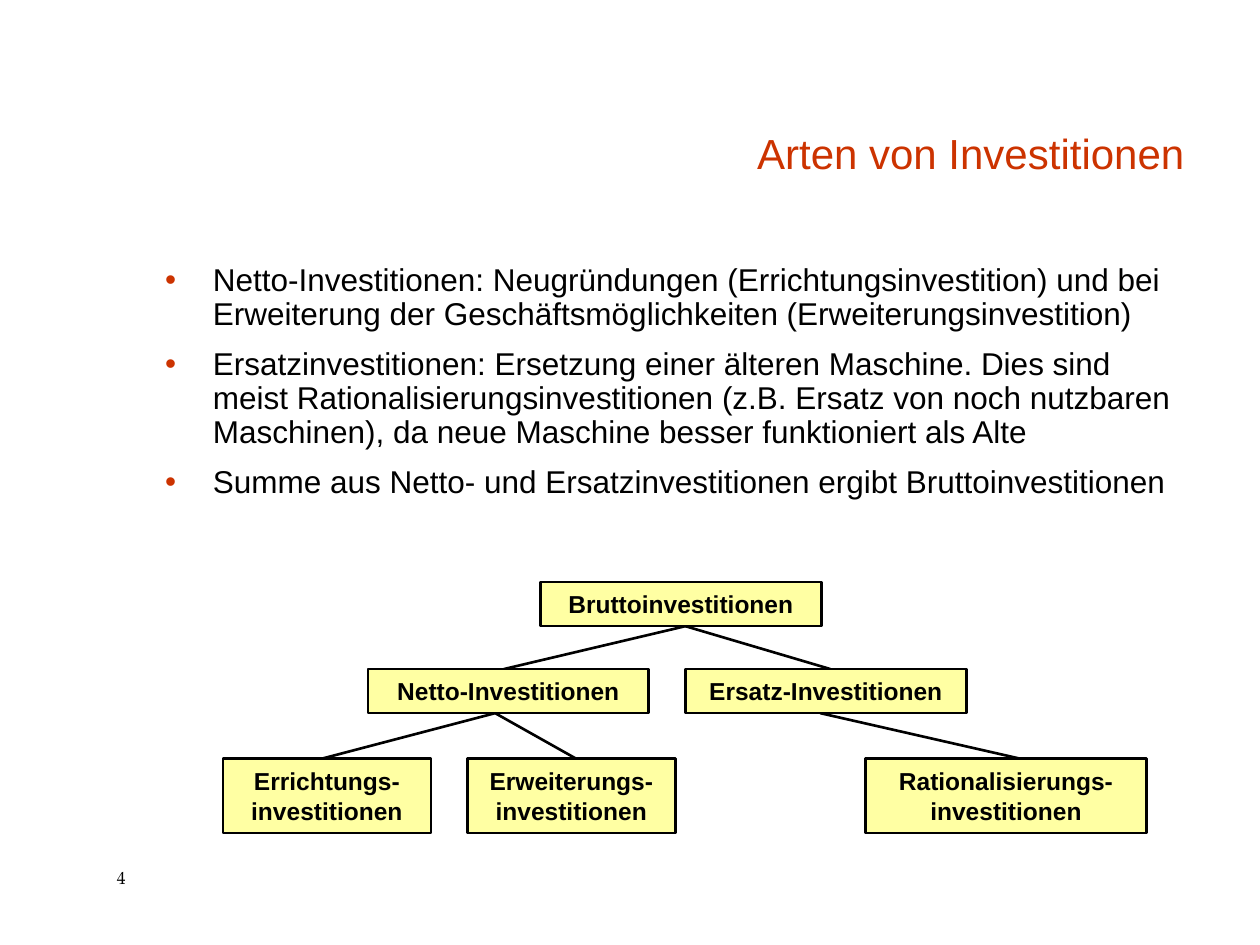
from lxml import etree
from pptx import Presentation
from pptx import util as u
from pptx.dml.color import RGBColor
from pptx.enum import shapes, text
from pptx.oxml import ns

COLORS = {"accent": "CC3300", "ink": "000000", "box": "FFFFA3"}
SANS, SERIF = "Arial", "TeX Gyre Pagella"

TITLE = "Arten von Investitionen"
BULLETS = [
    "Netto-Investitionen: Neugründungen (Errichtungsinvestition) und bei "
    "Erweiterung der Geschäftsmöglichkeiten (Erweiterungsinvestition)",
    "Ersatzinvestitionen: Ersetzung einer älteren Maschine. Dies sind meist "
    "Rationalisierungsinvestitionen (z.B. Ersatz von noch nutzbaren Maschinen), "
    "da neue Maschine besser funktioniert als Alte",
    "Summe aus Netto- und Ersatzinvestitionen ergibt Bruttoinvestitionen",
]

# Tree levels in grid rows: (top, height); box widths in grid columns
LEVELS = [(46.2, 3.5), (53.1, 3.5), (60.2, 5.9)]
WIDE, NARROW = 22.3, 16.5
BOXES = [  # label, level, left column, width
    ("Bruttoinvestitionen", 0, 42.9, WIDE),
    ("Netto-Investitionen", 1, 29.2, WIDE),
    ("Ersatz-Investitionen", 1, 54.4, WIDE),
    ("Errichtungs-\vinvestitionen", 2, 17.7, NARROW),
    ("Erweiterungs-investitionen", 2, 37.1, NARROW),
    ("Rationalisierungs-investitionen", 2, 68.7, WIDE),
]
BRANCHES = [  # parent level, parent column, child columns
    (0, 54.4, [65.9, 40]),
    (1, 39.3, [25.6, 45.7]),
    (1, 65.1, [80.9]),
]


class SlideBuilder:
    """Places styled elements on a grid of 100 columns by 75 rows."""

    COLUMNS, ROWS = 100, 75

    def __init__(self, presentation):
        self.column = presentation.slide_width / self.COLUMNS
        self.row = presentation.slide_height / self.ROWS
        self.slide = presentation.slides.add_slide(presentation.slide_layouts[1])

    def grid(self, left, top, width, height):
        return (round(left * self.column), round(top * self.row),
                round(width * self.column), round(height * self.row))

    def color(self, name):
        return RGBColor.from_string(COLORS[name])

    def move(self, shape, *cells):
        shape.left, shape.top, shape.width, shape.height = self.grid(*cells)

    def set_text(self, shape, content, size, color="ink", font=SANS, bold=False,
                 align=text.PP_ALIGN.LEFT, anchor=text.MSO_ANCHOR.TOP):
        frame = shape.text_frame
        frame.text = content
        frame.word_wrap = True
        frame.auto_size = text.MSO_AUTO_SIZE.NONE
        frame.vertical_anchor = anchor
        for paragraph in frame.paragraphs:
            paragraph.alignment = align
            paragraph.space_before = u.Pt(0)
            for run in paragraph.runs:
                run.font.name, run.font.size, run.font.bold = font, u.Pt(size), bold
                run.font.color.rgb = self.color(color)
        return frame

    def title(self, content, *cells):
        shape = self.slide.shapes.title
        self.move(shape, *cells)
        frame = self.set_text(shape, content, 24, "accent", align=text.PP_ALIGN.RIGHT,
                              anchor=text.MSO_ANCHOR.BOTTOM)
        frame.paragraphs[0].line_spacing = 0.9

    def bullets(self, items, *cells):
        shape = self.slide.placeholders[1]
        self.move(shape, *cells)
        frame = self.set_text(shape, "\n".join(items), 18)
        for index, paragraph in enumerate(frame.paragraphs):
            paragraph.line_spacing = 0.9
            paragraph.space_before = u.Pt(9 if index else 0)
            self.add_bullet(paragraph)

    def add_bullet(self, paragraph):
        properties = paragraph._p.get_or_add_pPr()
        indent = u.Inches(0.38)
        properties.set("marL", str(indent))
        properties.set("indent", str(-indent))
        color = etree.SubElement(properties, ns.qn("a:buClr"))
        etree.SubElement(color, ns.qn("a:srgbClr"), val=COLORS["accent"])
        etree.SubElement(properties, ns.qn("a:buFont"), typeface=SANS)
        etree.SubElement(properties, ns.qn("a:buChar"), char="•")

    def text_box(self, content, size, font, *cells):
        shape = self.slide.shapes.add_textbox(*self.grid(*cells))
        self.set_text(shape, content, size, font=font)

    def box(self, label, *cells):
        shape = self.slide.shapes.add_shape(shapes.MSO_SHAPE.RECTANGLE, *self.grid(*cells))
        shape.shadow.inherit = False
        shape.fill.solid()
        shape.fill.fore_color.rgb = self.color("box")
        self.outline(shape)
        self.set_text(shape, label, 14, bold=True, align=text.PP_ALIGN.CENTER,
                      anchor=text.MSO_ANCHOR.MIDDLE)

    def line(self, *ends):
        connector = self.slide.shapes.add_connector(
            shapes.MSO_CONNECTOR.STRAIGHT, *self.grid(*ends))
        self.outline(connector)
        etree.SubElement(connector._element.spPr, ns.qn("a:effectLst"))

    def outline(self, shape):
        shape.line.color.rgb = self.color("ink")
        shape.line.width = u.Pt(1.5)


def main():
    presentation = Presentation()
    presentation.slide_width, presentation.slide_height = u.Inches(10), u.Inches(7.5)
    builder = SlideBuilder(presentation)
    builder.title(TITLE, 20.9, 4.2, 74.1, 10.5)
    builder.bullets(BULLETS, 12.1, 20.5, 82.9, 22.9)
    builder.text_box("4", 10, SERIF, 8.3, 68.3, 6.7, 2.7)
    for level, parent, children in BRANCHES:
        bottom = sum(LEVELS[level])
        for child in children:
            builder.line(parent, bottom, child, LEVELS[level + 1][0])
    for label, level, left, width in BOXES:
        top, height = LEVELS[level]
        builder.box(label, left, top, width, height)
    presentation.save("out.pptx")


if __name__ == "__main__":
    main()
